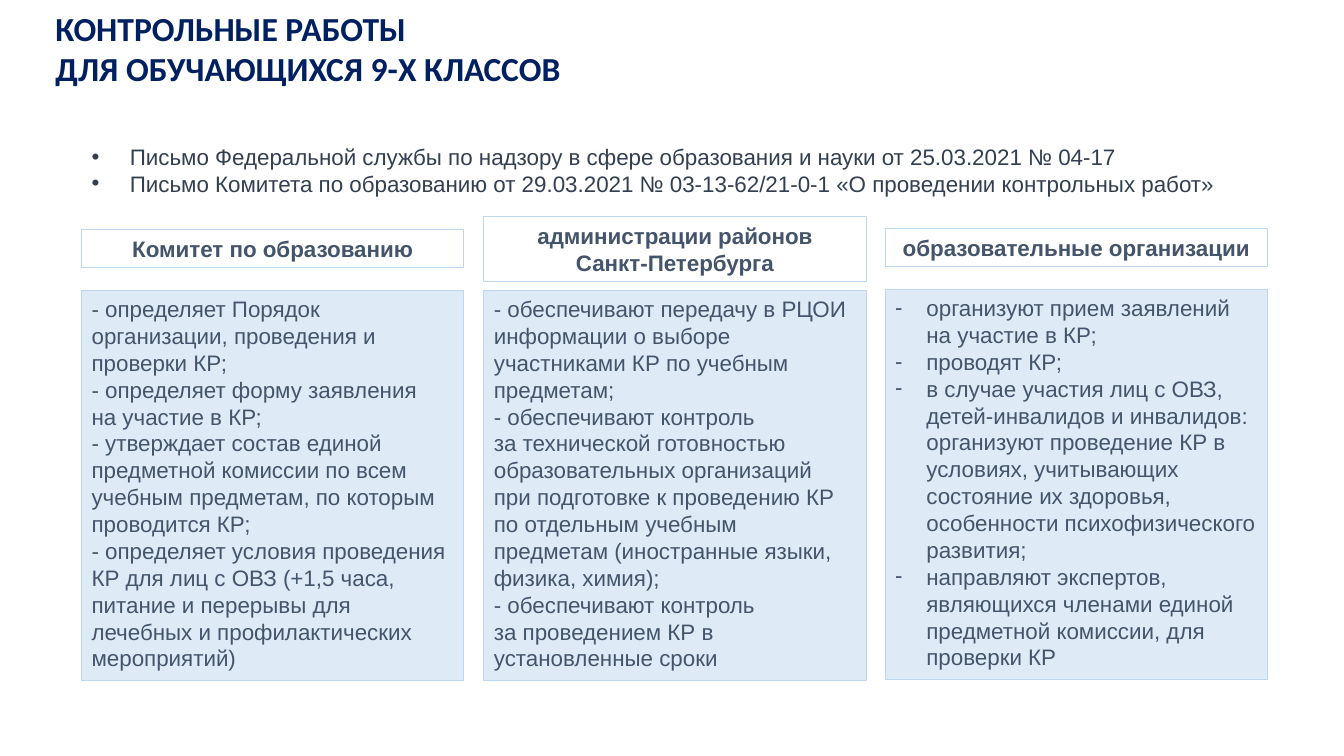
"""Build the slide on control tests for 9th-grade students."""
from pptx import Presentation
from pptx.dml.color import RGBColor
from pptx.enum.shapes import MSO_SHAPE as Shape
from pptx.enum.text import MSO_ANCHOR as Anchor, MSO_AUTO_SIZE as Auto, PP_ALIGN as Align
from pptx.oxml.ns import qn
from pptx.util import Pt
from lxml.etree import SubElement

PX = 9144
NAVY = RGBColor(0x00, 0x20, 0x60)
DARK = RGBColor(0x33, 0x3F, 0x50)
SLATE = RGBColor(0x44, 0x54, 0x6A)
PALE = RGBColor(0xDE, 0xEB, 0xF7)
EDGE = RGBColor(0xBD, 0xD7, 0xEE)


def write(frame, lines, color, face="Arial", size=16, bold=False,
          align=Align.LEFT, mark=None, dent=0):
    """Fill a text frame with one paragraph per line."""
    frame.word_wrap = True
    frame.auto_size = Auto.NONE
    for i, line in enumerate(lines):
        para = frame.paragraphs[0] if i == 0 else frame.add_paragraph()
        para.alignment = align
        if mark:
            props = para._p.get_or_add_pPr()
            props.set("marL", str(dent * PX))
            props.set("indent", str(-dent * PX))
            SubElement(props, qn("a:buFont")).set("typeface", "Arial")
            SubElement(props, qn("a:buChar")).set("char", mark)
        for j, part in enumerate(line.split("\n")):
            if j:
                para.add_line_break()
            run = para.add_run()
            run.text = part
            run.font.name = face
            run.font.size = Pt(size)
            run.font.bold = bold
            run.font.color.rgb = color


def add_box(slide, left, top, width, height):
    """Add a thin-edged rectangle."""
    box = slide.shapes.add_shape(
        Shape.RECTANGLE, left * PX, top * PX, width * PX, height * PX)
    box.shadow.inherit = False
    box.line.color.rgb = EDGE
    box.line.width = Pt(0.75)
    return box


deck = Presentation()
deck.slide_width, deck.slide_height = 1333 * PX, 750 * PX
slide = deck.slides.add_slide(deck.slide_layouts[5])

title = slide.shapes.title
title.left, title.top, title.width, title.height = 45 * PX, 2 * PX, 872 * PX, 91 * PX
title.text_frame.vertical_anchor = Anchor.MIDDLE
write(title.text_frame, ["КОНТРОЛЬНЫЕ РАБОТЫ", "ДЛЯ ОБУЧАЮЩИХСЯ 9-Х КЛАССОВ"],
      NAVY, "Calibri", 24, True)

basis = slide.shapes.add_textbox(81 * PX, 137 * PX, 1175 * PX, 64 * PX).text_frame
write(basis, [
    "Письмо Федеральной службы по надзору в сфере образования и науки от 25.03.2021 № 04-17",
    "Письмо Комитета по образованию от 29.03.2021 № 03-13-62/21-0-1 «О проведении контрольных работ»",
], DARK, mark="•", dent=38)
basis.paragraphs[1].alignment = Align.JUSTIFY

columns = [
    (81, 228, 37, 288, ["Комитет по образованию"], None, [
        "- определяет Порядок организации, проведения и проверки КР;",
        "- определяет форму заявления \nна участие в КР;",
        "- утверждает состав единой предметной комиссии по всем учебным предметам, "
        "по которым проводится КР;",
        "- определяет условия проведения КР для лиц с ОВЗ (+1,5 часа, питание и перерывы "
        "для лечебных и профилактических мероприятий)",
    ]),
    (480, 215, 64, 288, ["администрации районов", "Санкт-Петербурга"], None, [
        "- обеспечивают передачу в РЦОИ информации о выборе участниками КР "
        "по учебным предметам;",
        "- обеспечивают контроль \nза технической готовностью образовательных организаций",
        "при подготовке к проведению КР по отдельным учебным предметам "
        "(иностранные языки, физика, химия);",
        "- обеспечивают контроль \nза проведением КР в установленные сроки",
    ]),
    (878, 227, 37, 287, ["образовательные организации"], "-", [
        "организуют прием заявлений \nна участие в КР;",
        "проводят КР;",
        "в случае участия лиц с ОВЗ, детей-инвалидов и инвалидов: организуют проведение КР "
        "в условиях, учитывающих состояние их здоровья, особенности психофизического развития;",
        "направляют экспертов, являющихся членами единой предметной комиссии, "
        "для проверки КР",
    ]),
]
for left, top, height, base, heading, mark, duties in columns:
    head = add_box(slide, left, top, 379, height)
    head.fill.background()
    write(head.text_frame, heading, SLATE, bold=True, align=Align.CENTER)
    body = add_box(slide, left, base, 379, 387)
    body.fill.solid()
    body.fill.fore_color.rgb = PALE
    body.text_frame.vertical_anchor = Anchor.TOP
    write(body.text_frame, duties, SLATE, mark=mark, dent=31)

deck.save("out.pptx")
